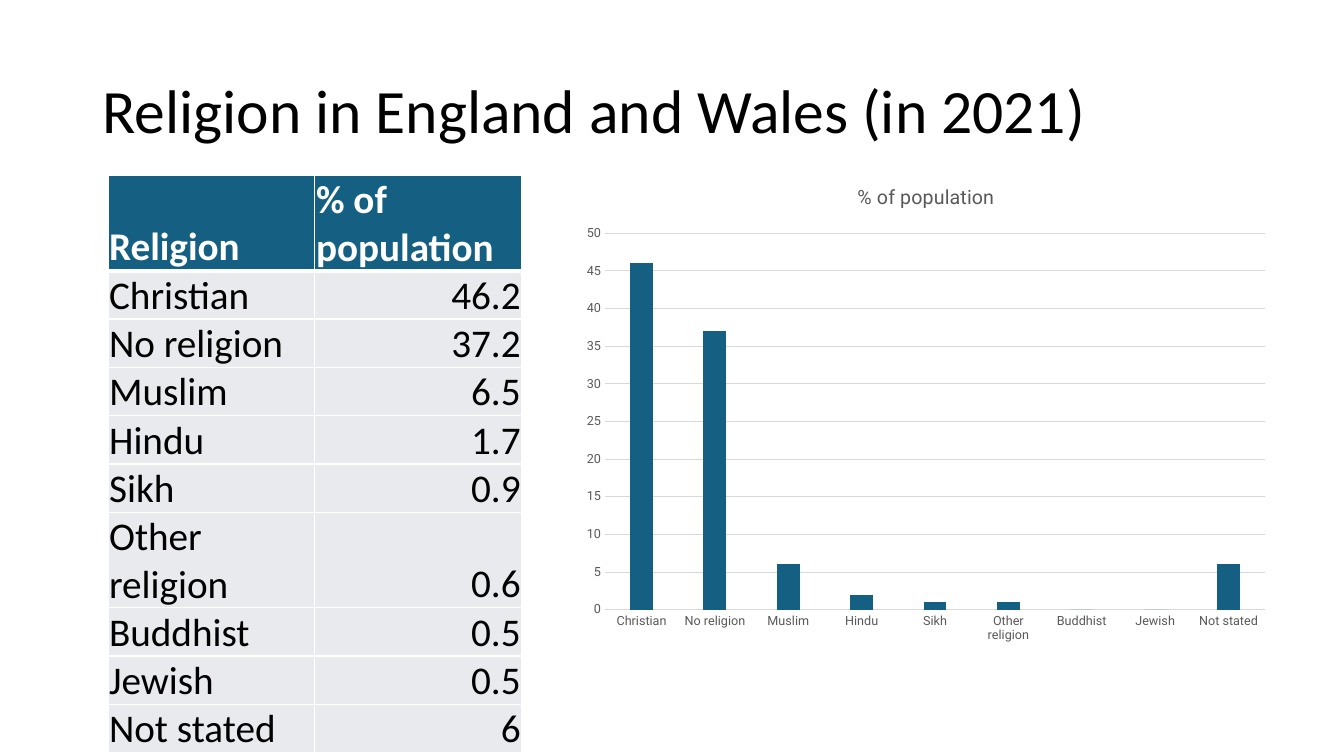
import pptx
import pptx.chart.data
import pptx.dml.color
import pptx.enum.chart
import pptx.enum.text
import pptx.oxml
import pptx.oxml.ns
import pptx.util
from pptx.util import Cm, Pt

HEADING = "% of population"
SHARES = [
    ("Christian", 46.2),
    ("No religion", 37.2),
    ("Muslim", 6.5),
    ("Hindu", 1.7),
    ("Sikh", 0.9),
    ("Other religion", 0.6),
    ("Buddhist", 0.5),
    ("Jewish", 0.5),
    ("Not stated", 6),
]
BLUE, PALE, WHITE, BLACK = "156082", "E8EAED", "FFFFFF", "000000"
GREY_TEXT, GREY_LINE = "595959", "D9D9D9"


def rgb(value):
    return pptx.dml.color.RGBColor.from_string(value)


def style_font(font, name, size, color, bold=False):
    font.name = name
    font.size = Pt(size)
    font.bold = bold
    font.color.rgb = rgb(color)


def add_title(slide, text):
    sp = slide.shapes.add_textbox(Cm(2.33), Cm(1.01), Cm(29.21), Cm(3.68))
    tf = sp.text_frame
    tf.word_wrap = True
    tf.vertical_anchor = pptx.enum.text.MSO_ANCHOR.MIDDLE
    tf.text = text
    p = tf.paragraphs[0]
    p.line_spacing = 0.9
    style_font(p.runs[0].font, "Calibri", 44, BLACK)


def set_border(cell, side, width):
    ns = pptx.oxml.ns.nsdecls("a")
    cell._tc.get_or_add_tcPr().append(pptx.oxml.parse_xml(
        f'<a:ln{side} {ns} w="{Pt(width)}"><a:solidFill>'
        f'<a:srgbClr val="{WHITE}"/></a:solidFill></a:ln{side}>'))


def fill_cell(cell, text, row, align_right):
    header = row == 0
    # Borders, with a thick rule between header and body
    thick_side = {0: "B", 1: "T"}.get(row)
    for side in "LRTB":
        set_border(cell, side, 3 if side == thick_side else 1)
    cell.fill.solid()
    cell.fill.fore_color.rgb = rgb(BLUE if header else PALE)

    # Text
    cell.margin_left = cell.margin_right = cell.margin_top = Cm(0.03)
    cell.margin_bottom = 0
    cell.vertical_anchor = pptx.enum.text.MSO_ANCHOR.BOTTOM
    cell.text = text
    p = cell.text_frame.paragraphs[0]
    if align_right:
        p.alignment = pptx.enum.text.PP_ALIGN.RIGHT
    style_font(p.runs[0].font, "Calibri", 28, WHITE if header else BLACK, header)


def add_share_table(slide):
    rows = [("Religion", HEADING)] + [(name, str(value)) for name, value in SHARES]
    height = Cm(12.04)
    frame = slide.shapes.add_table(len(rows), 2, Cm(2.72), Cm(4.42),
                                   Cm(10.43), height)
    table = frame.table
    for row, texts in enumerate(rows):
        table.rows[row].height = Cm(0.85)
        for col, text in enumerate(texts):
            fill_cell(table.cell(row, col), text, row, row > 0 and col == 1)
    # Row heights are minimums; the frame keeps its full height
    frame.height = height


def style_axis(axis):
    axis.major_tick_mark = pptx.enum.chart.XL_TICK_MARK.NONE
    axis.minor_tick_mark = pptx.enum.chart.XL_TICK_MARK.NONE
    style_font(axis.tick_labels.font, "Roboto", 9, GREY_TEXT)


def style_line(line):
    line.color.rgb = rgb(GREY_LINE)
    line.width = Pt(0.75)


def add_share_chart(slide):
    data = pptx.chart.data.CategoryChartData()
    data.categories = [name for name, _ in SHARES]
    data.add_series(HEADING, [round(value) for _, value in SHARES])
    chart = slide.shapes.add_chart(
        pptx.enum.chart.XL_CHART_TYPE.COLUMN_CLUSTERED,
        Cm(14.43), Cm(4.16), Cm(17.81), Cm(12.29), data).chart
    style_font(chart.font, "Roboto", 10, BLACK)
    chart.has_legend = False

    # Title
    chart.has_title = True
    tf = chart.chart_title.text_frame
    tf.text = HEADING
    style_font(tf.paragraphs[0].runs[0].font, "Roboto", 14, GREY_TEXT)
    chart.chart_title.include_in_layout = False

    # Axes
    style_axis(chart.category_axis)
    style_line(chart.category_axis.format.line)
    values = chart.value_axis
    style_axis(values)
    values.minimum_scale, values.maximum_scale, values.major_unit = 0, 50, 5
    values.tick_labels.number_format = "General"
    values.tick_labels.number_format_is_linked = False
    values.format.line.fill.background()
    style_line(values.major_gridlines.format.line)

    # Columns
    plot = chart.plots[0]
    plot.vary_by_categories = False
    plot.gap_width = 219
    plot.overlap = -27
    fill = plot.series[0].format.fill
    fill.solid()
    fill.fore_color.rgb = rgb(BLUE)


def main():
    prs = pptx.Presentation()
    prs.slide_width, prs.slide_height = Cm(33.87), Cm(19.05)
    slide = prs.slides.add_slide(prs.slide_layouts[6])
    add_title(slide, "Religion in England and Wales (in 2021)")
    add_share_table(slide)
    add_share_chart(slide)
    prs.save("out.pptx")


if __name__ == "__main__":
    main()
